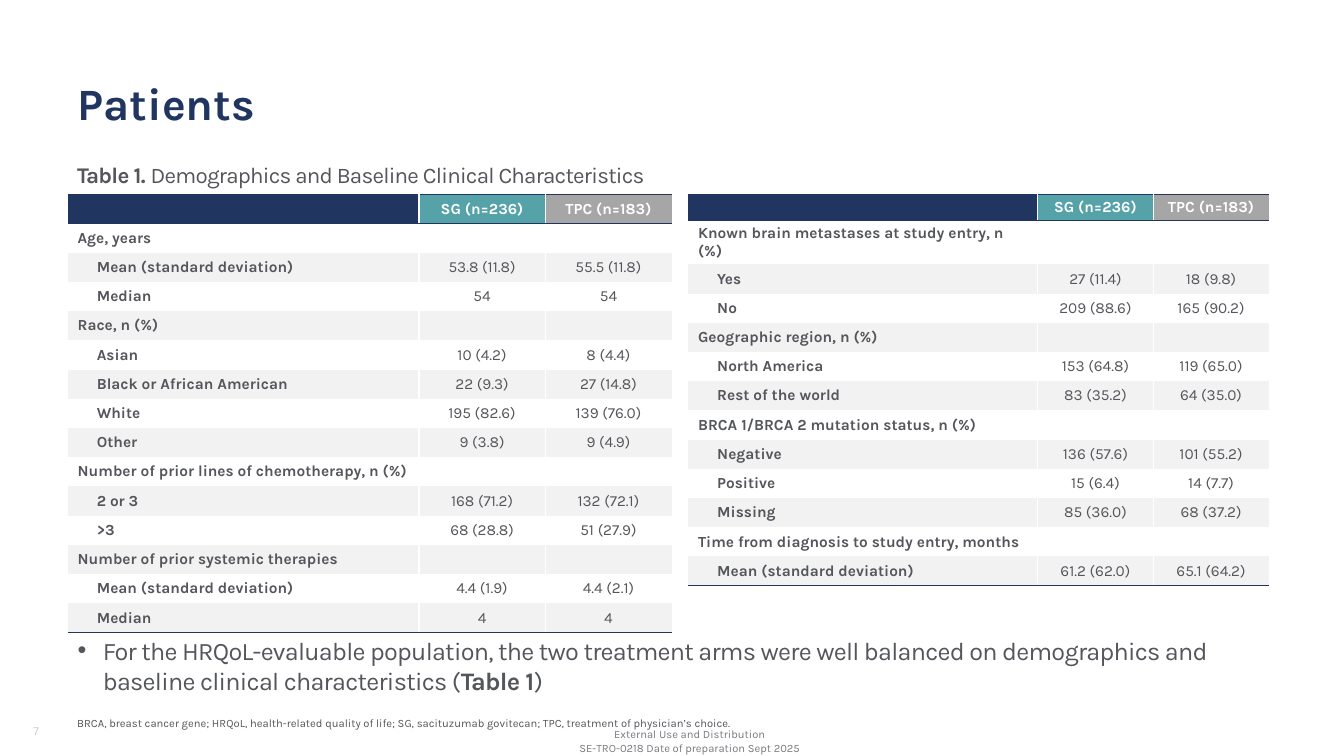
from dataclasses import dataclass

from lxml.etree import SubElement
from pptx import Presentation
from pptx.dml.color import RGBColor
from pptx.enum.text import MSO_ANCHOR as Anchor
from pptx.enum.text import MSO_AUTO_SIZE as AutoSize
from pptx.enum.text import PP_ALIGN as Align
from pptx.oxml.ns import qn
from pptx.util import Pt

NAVY, TEAL, SILVER = "203661", "55A2A8", "A6A6A6"
WHITE, BAND, INK = "FFFFFF", "F2F2F2", "54565B"
ROW_HEIGHT = 20.88


@dataclass
class Row:
    label: str
    sg: str = ""
    tpc: str = ""


@dataclass
class Characteristics:
    left: float
    label_width: float
    arm_width: float
    header_height: float
    rows: list[Row]


@dataclass
class Caption:
    left: float
    top: float
    width: float
    height: float
    paragraphs: list[str]
    color: str
    font: str = "Karla"
    anchor: Anchor = Anchor.BOTTOM
    align: Align = Align.LEFT


HEADER = Row("", "SG (n=236)", "TPC (n=183)")

TABLES = [
    Characteristics(48.24, 251, 90.3, ROW_HEIGHT, [
        Row("Age, years"),
        Row("Mean (standard deviation)", "53.8 (11.8)", "55.5 (11.8)"),
        Row("Median", "54", "54"),
        Row("Race, n (%)"),
        Row("Asian", "10 (4.2)", "8 (4.4)"),
        Row("Black or African American", "22 (9.3)", "27 (14.8)"),
        Row("White", "195 (82.6)", "139 (76.0)"),
        Row("Other", "9 (3.8)", "9 (4.9)"),
        Row("Number of prior lines of chemotherapy, n (%)"),
        Row("2 or 3", "168 (71.2)", "132 (72.1)"),
        Row(">3", "68 (28.8)", "51 (27.9)"),
        Row("Number of prior systemic therapies"),
        Row("Mean (standard deviation)", "4.4 (1.9)", "4.4 (2.1)"),
        Row("Median", "4", "4"),
    ]),
    Characteristics(491.4, 249.8, 82.6, 18.6, [
        Row("Known brain metastases at study entry, n (%)"),
        Row("Yes", "27 (11.4)", "18 (9.8)"),
        Row("No", "209 (88.6)", "165 (90.2)"),
        Row("Geographic region, n (%)"),
        Row("North America", "153 (64.8)", "119 (65.0)"),
        Row("Rest of the world", "83 (35.2)", "64 (35.0)"),
        Row("BRCA 1/BRCA 2 mutation status, n (%)"),
        Row("Negative", "136 (57.6)", "101 (55.2)"),
        Row("Positive", "15 (6.4)", "14 (7.7)"),
        Row("Missing", "85 (36.0)", "68 (37.2)"),
        Row("Time from diagnosis to study entry, months"),
        Row("Mean (standard deviation)", "61.2 (62.0)", "65.1 (64.2)"),
    ]),
]

CAPTIONS = [
    Caption(369.3, 517.7, 247, 23, ["External Use and Distribution",
                                    "SE-TRO-0218 Date of preparation Sept 2025"],
            "787A7E", anchor=Anchor.MIDDLE, align=Align.CENTER),
    Caption(16.56, 507.6, 43.2, 23, ["7"], "C6CAC6", font="Arial"),
    Caption(48, 507.6, 864, 17.3,
            ["BRCA, breast cancer gene; HRQoL, health-related quality of life; "
             "SG, sacituzumab govitecan; TPC, treatment of physician’s choice."], INK),
]


def rgb(color: str) -> RGBColor:
    return RGBColor.from_string(color)


def set_font(font, size: float, color: str, bold: bool = False, name: str = "Karla") -> None:
    font.name, font.size, font.bold = name, Pt(size), bold
    font.color.rgb = rgb(color)


def place(shape, left: float, top: float, width: float, height: float) -> None:
    shape.left, shape.top, shape.width, shape.height = map(Pt, (left, top, width, height))


def add_tight_runs(paragraph, size: float, parts: list[tuple[str, bool]]) -> None:
    for text, bold in parts:
        run = paragraph.add_run()
        run.text = text
        set_font(run.font, size, INK, bold)
        run.font._element.set("spc", "-50")


def set_borders(cell, colors: dict[str, str | None]) -> None:
    properties = cell._tc.get_or_add_tcPr()
    for side, color in colors.items():
        line = SubElement(properties, qn(f"a:ln{side}"), w=str(Pt(1)))
        if color:
            fill = SubElement(line, qn("a:solidFill"))
            SubElement(fill, qn("a:srgbClr"), val=color)
        else:
            SubElement(line, qn("a:noFill"))


def fill_cell(cell, text: str, column: int, row: int, last: int, indented: bool) -> None:
    header = row == 0
    set_borders(cell, {
        "L": WHITE if column > 0 else None,
        "R": WHITE if column < 2 else None,
        "T": NAVY if row <= 1 else None,
        "B": NAVY if row in (0, last) else None,
    })
    cell.fill.solid()
    band = WHITE if row % 2 else BAND
    cell.fill.fore_color.rgb = rgb((NAVY, TEAL, SILVER)[column] if header else band)
    cell.vertical_anchor = Anchor.MIDDLE
    cell.margin_left = cell.margin_right = Pt(7.2)
    cell.margin_top = cell.margin_bottom = Pt(2.88)
    paragraph = cell.text_frame.paragraphs[0]
    paragraph.alignment = Align.CENTER if column else Align.LEFT
    if text:
        paragraph.text = text
    else:
        paragraph._p.get_or_add_endParaRPr().set("sz", "1100")
    if indented and column == 0:
        paragraph._p.get_or_add_pPr().set("marL", str(Pt(13.7)))
    set_font(paragraph.font, 11, WHITE if header else INK, header or column == 0)


def add_characteristics(slide, item: Characteristics) -> None:
    rows = [HEADER, *item.rows]
    widths = [item.label_width, item.arm_width, item.arm_width]
    height = item.header_height + ROW_HEIGHT * len(item.rows)
    table = slide.shapes.add_table(len(rows), 3, Pt(item.left), Pt(138.8),
                                   Pt(sum(widths)), Pt(height)).table
    table.first_row = table.horz_banding = False
    for column, width in zip(table.columns, widths):
        column.width = Pt(width)
    for index, row in enumerate(rows):
        table.rows[index].height = Pt(ROW_HEIGHT if index else item.header_height)
        for column, text in enumerate((row.label, row.sg, row.tpc)):
            fill_cell(table.cell(index, column), text, column, index,
                      len(rows) - 1, bool(row.sg))


def add_caption(slide, caption: Caption) -> None:
    box = slide.shapes.add_textbox(Pt(caption.left), Pt(caption.top),
                                   Pt(caption.width), Pt(caption.height))
    frame = box.text_frame
    frame.word_wrap = True
    frame.vertical_anchor = caption.anchor
    frame.text = "\n".join(caption.paragraphs)
    for paragraph in frame.paragraphs:
        paragraph.alignment = caption.align
        set_font(paragraph.font, 8, caption.color, name=caption.font)


def main() -> None:
    presentation = Presentation()
    presentation.slide_width, presentation.slide_height = Pt(960), Pt(540)
    slide = presentation.slides.add_slide(presentation.slide_layouts[1])

    title = slide.shapes.title
    place(title, 48.24, 10.1, 860.4, 86.4)
    title.text_frame.text = "Patients"
    title.text_frame.vertical_anchor = Anchor.BOTTOM
    title.text_frame.auto_size = AutoSize.NONE
    heading = title.text_frame.paragraphs[0]
    heading.alignment, heading.line_spacing = Align.LEFT, 0.9
    set_font(heading.font, 32, NAVY, True)

    body = slide.placeholders[1]
    place(body, 48.24, 450, 857.5, 52)
    body.text_frame.auto_size = AutoSize.NONE
    finding = body.text_frame.paragraphs[0]
    finding.space_before = Pt(0)
    properties = finding._p.get_or_add_pPr()
    properties.set("marL", str(Pt(18)))
    properties.set("indent", str(Pt(-18)))
    add_tight_runs(finding, 18, [
        ("For the HRQoL-evaluable population, the two treatment arms were well balanced "
         "on demographics and baseline clinical characteristics (", False),
        ("Table 1", True), (")", False)])

    for item in TABLES:
        add_characteristics(slide, item)

    table_title = slide.shapes.add_textbox(Pt(48), Pt(111.6), Pt(729.4), Pt(26.6))
    table_title.text_frame.word_wrap = True
    add_tight_runs(table_title.text_frame.paragraphs[0], 16, [
        ("Table 1. ", True),
        ("Demographics and Baseline Clinical Characteristics", False)])

    for caption in CAPTIONS:
        add_caption(slide, caption)
    presentation.save("out.pptx")


if __name__ == "__main__":
    main()
